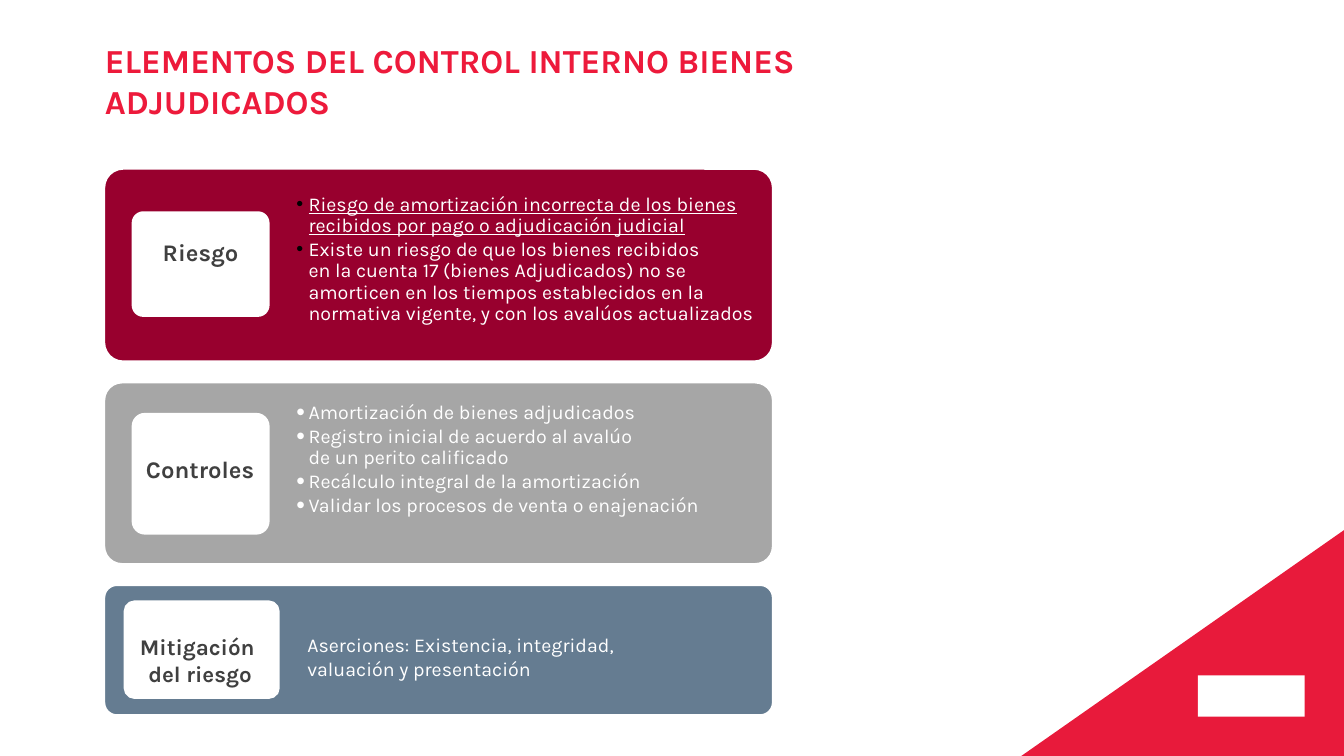
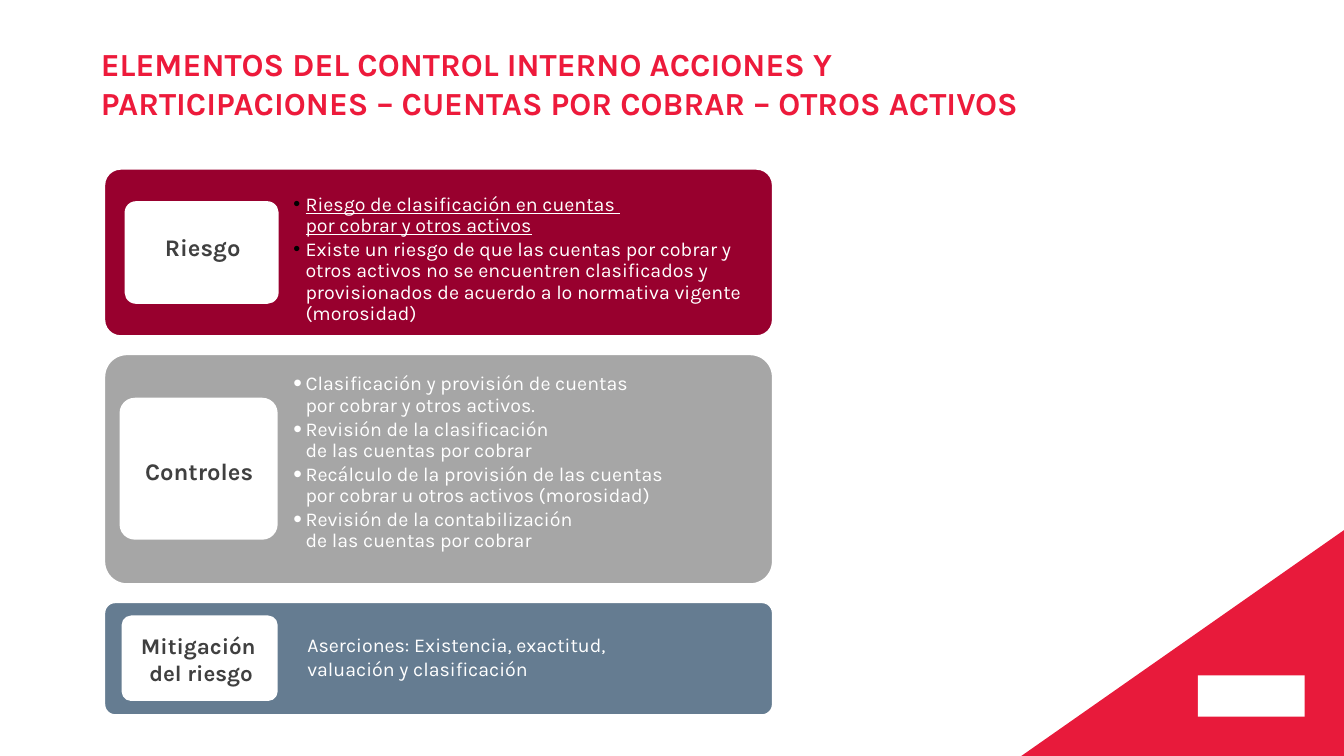
from copy import deepcopy

from lxml.etree import SubElement
from pptx import Presentation
from pptx.dml.color import RGBColor
from pptx.enum.shapes import MSO_SHAPE as SHAPE
from pptx.enum.text import MSO_ANCHOR as ANCHOR, MSO_AUTO_SIZE as FIT, PP_ALIGN as ALIGN
from pptx.oxml.ns import qn
from pptx.util import Inches, Pt

HUES = {
    "title": "ED1A3B", "wedge": "E81A3B", "risk": "98002E", "control": "A6A6A6",
    "relief": "657C91", "label": "404040", "white": "FFFFFF", "black": "000000",
}
FACE = "Karla"
WIDE, HIGH = 13.33, 7.5
LEFT, TOP, WIDTH = 1.03, 1.67, 6.64
KINDS = ("risk", "control", "relief")
LABELS = {"risk": "Riesgo", "control": "Controles", "relief": "Mitigación \vdel riesgo"}
SIZES = {"risk": 17, "control": 17, "relief": 16}
LISTS = {
    "risk": {"top": 0.26, "dot": "black", "scale": 100},
    "control": {"top": 0.2, "dot": "white", "scale": 125},
}

# Boxes are left, top, width, height in inches.
SLIDES = [
    {
        "title": "ELEMENTOS DEL CONTROL INTERNO BIENES ADJUDICADOS",
        "head": (1.04, 0.4, 7.46, 1.12), "size": 24,
        "heights": (1.92, 1.81, 1.3), "gap": 0.2, "list": 2.55,
        "tiles": [(1.32, 2.11, 1.34, 1.02), (1.32, 4.11, 1.34, 1.18), (1.24, 5.97, 1.52, 0.95)],
        "labels": [(1.08, 2.31, 1.82, 0.39), (1.13, 4.46, 1.71, 0.39), (1.13, 6.23, 1.71, 0.64)],
        "risk": [
            "Riesgo de amortización incorrecta de los bienes recibidos por pago o adjudicación judicial",
            "Existe un riesgo de que los bienes recibidos \ven la cuenta 17 (bienes Adjudicados) no se "
            "\vamorticen en los tiempos establecidos en la normativa vigente, y con los avalúos actualizados",
        ],
        "control": [
            "Amortización de bienes adjudicados",
            "Registro inicial de acuerdo al avalúo \vde un perito calificado",
            "Recálculo integral de la amortización",
            "Validar los procesos de venta o enajenación",
        ],
        "relief": "Aserciones: Existencia, integridad, \vvaluación y presentación",
    },
    {
        "title": "ELEMENTOS DEL CONTROL INTERNO ACCIONES Y PARTICIPACIONES – CUENTAS POR COBRAR – OTROS ACTIVOS",
        "head": (1, 0.44, 9.22, 1.12), "size": 23,
        "heights": (1.67, 2.29, 1.13), "gap": 0.17, "list": 2.52,
        "tiles": [(1.25, 2.01, 1.5, 0.99), (1.2, 3.96, 1.54, 1.38), (1.22, 6.12, 1.52, 0.82)],
        "labels": [(1.1, 2.26, 1.82, 0.39), (1.12, 4.48, 1.71, 0.39), (1.14, 6.22, 1.71, 0.64)],
        "risk": [
            "Riesgo de clasificación en cuentas \vpor cobrar y otros activos",
            "Existe un riesgo de que las cuentas por cobrar y otros activos no se encuentren "
            "clasificados y provisionados de acuerdo a lo normativa vigente (morosidad)",
        ],
        "control": [
            "Clasificación y provisión de cuentas \vpor cobrar y otros activos.",
            "Revisión de la clasificación \vde las cuentas por cobrar",
            "Recálculo de la provisión de las cuentas \vpor cobrar u otros activos (morosidad)",
            "Revisión de la contabilización \vde las cuentas por cobrar",
        ],
        "relief": "Aserciones: Existencia, exactitud, \vvaluación y clasificación",
    },
]


def rgb(name):
    return RGBColor.from_string(HUES[name])


def assign(item, values):
    for name, value in values.items():
        setattr(item, name, value)


def place(shape, box):
    assign(shape, dict(zip(("left", "top", "width", "height"), map(Inches, box))))


def paint(shape, hue, edge=None):
    shape.shadow.inherit = False
    shape.fill.solid()
    shape.fill.fore_color.rgb = rgb(hue)
    if edge:
        shape.line.color.rgb = rgb(edge)
        shape.line.width = Pt(2)
    else:
        shape.line.fill.background()


def write(para, text, size, hue, **style):
    """Set the text and give its runs and line breaks one format."""
    para.text = text
    for run in para.runs:
        assign(run.font, {"name": FACE, "size": Pt(size), **style})
        run.font.color.rgb = rgb(hue)
    for brk in para._p.findall(qn("a:br")):
        brk.append(deepcopy(para.runs[0].font._element))


def set_frame(frame, margins):
    sides = ("margin_left", "margin_top", "margin_right", "margin_bottom")
    assign(frame, dict(zip(sides, map(Inches, margins))))
    assign(frame, {"word_wrap": True, "auto_size": FIT.NONE, "vertical_anchor": ANCHOR.TOP})


def add_card(slide, box, hue):
    card = slide.shapes.add_shape(SHAPE.ROUNDED_RECTANGLE, *map(Inches, box))
    card.adjustments[0] = 0.1
    paint(card, hue, "white")


def add_text(slide, box, text, size, hue, align=ALIGN.LEFT, **style):
    frame = slide.shapes.add_textbox(*map(Inches, box)).text_frame
    set_frame(frame, (0.1, 0.05, 0.1, 0.05))
    para = frame.paragraphs[0]
    para.alignment = align
    write(para, text, size, hue, **style)


def add_dot(para, hue, scale):
    """Give the paragraph a hanging bullet."""
    props = para._p.get_or_add_pPr()
    indent = Inches(0.12)
    props.set("marL", str(indent))
    props.set("indent", str(-indent))
    color = SubElement(props, qn("a:buClr"))
    SubElement(color, qn("a:srgbClr"), val=HUES[hue])
    SubElement(props, qn("a:buSzPct"), val=str(scale * 1000))
    SubElement(props, qn("a:buFont"), typeface="Arial")
    SubElement(props, qn("a:buChar"), char="•")


def fill_list(slide, body, box, kind, lines):
    look = LISTS[kind]
    place(body, box)
    slide.shapes.element.append(body.element)  # in front of its card
    frame = body.text_frame
    set_frame(frame, (0.39, look["top"], 0.04, 0.04))
    for i, line in enumerate(lines):
        para = frame.add_paragraph() if i else frame.paragraphs[0]
        write(para, line, 14, "white", underline=kind == "risk" and i == 0)
        assign(para, {"line_spacing": 0.9, "space_before": Pt(0), "space_after": Pt(2),
                      "alignment": ALIGN.LEFT})
        add_dot(para, look["dot"], look["scale"])


def add_corner(slide, layout):
    """Draw the corner wedge and its badge, then move them to the layout."""
    points = [(Inches(x), Inches(y)) for x, y in ((WIDE, 5.26), (10.13, HIGH), (WIDE, HIGH))]
    pen = slide.shapes.build_freeform(*points[0])
    pen.add_line_segments(points[1:], close=True)
    wedge = pen.convert_to_shape()
    badge = slide.shapes.add_shape(SHAPE.RECTANGLE, *map(Inches, (11.88, 6.7, 1.06, 0.41)))
    for shape, hue in ((wedge, "wedge"), (badge, "white")):
        paint(shape, hue)
        layout.shapes.element.append(shape.element)


def add_title(slide, data):
    title = slide.shapes.title
    place(title, data["head"])
    set_frame(title.text_frame, (0, 0, 0, 0))
    para = title.text_frame.paragraphs[0]
    para.alignment = ALIGN.LEFT
    write(para, data["title"], data["size"], "title", bold=True)


def build(slide, data):
    add_title(slide, data)
    bodies = dict(zip(LISTS, list(slide.placeholders)[1:]))
    top = TOP
    for kind, high, tile, label in zip(KINDS, data["heights"], data["tiles"], data["labels"]):
        add_card(slide, (LEFT, top, WIDTH, high), kind)
        add_card(slide, tile, "white")
        add_text(slide, label, LABELS[kind], SIZES[kind], "label", ALIGN.CENTER, bold=True)
        if kind in bodies:
            box = (data["list"], top, LEFT + WIDTH - data["list"], high)
            fill_list(slide, bodies[kind], box, kind, data[kind])
        else:
            add_text(slide, (2.95, 6.23, 4.76, 0.57), data[kind], 14, "white")
        top += high + data["gap"]


def main():
    deck = Presentation()
    assign(deck, {"slide_width": Inches(WIDE), "slide_height": Inches(HIGH)})
    layout = deck.slide_layouts.get_by_name("Two Content")
    for i, data in enumerate(SLIDES):
        slide = deck.slides.add_slide(layout)
        if i == 0:
            add_corner(slide, layout)
        build(slide, data)
    deck.save("out.pptx")


if __name__ == "__main__":
    main()
